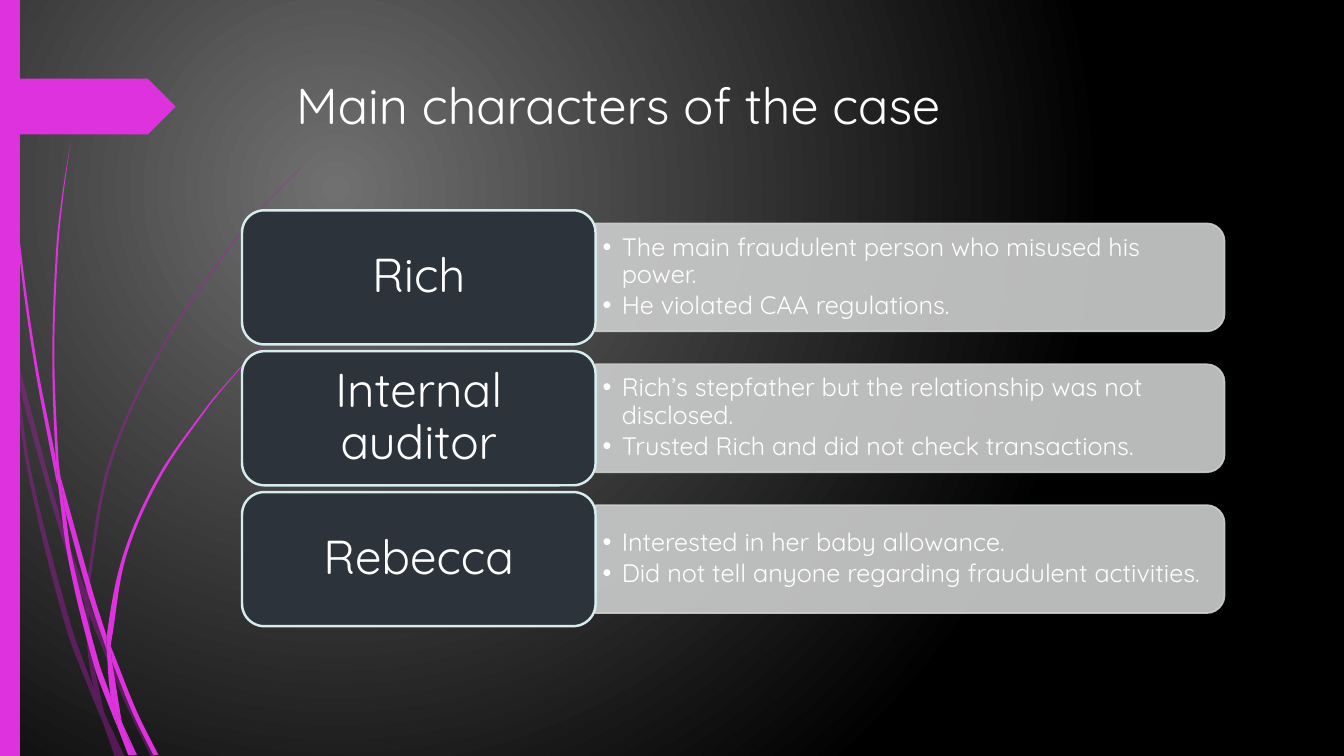
from math import dist

from lxml.etree import SubElement
from pptx import Presentation
from pptx.dml.color import RGBColor
from pptx.enum.shapes import MSO_SHAPE
from pptx.enum.text import MSO_ANCHOR, PP_ALIGN
from pptx.oxml.ns import qn
from pptx.util import Cm, Pt

FONT = "Quicksand"
COLORS = {
    "glow": "707070",
    "black": "000000",
    "pink": "DE32DE",
    "purple": "B01CB0",
    "label": "2C333A",
    "label_line": "D6ECED",
    "panel": "CDCECE",
    "white": "FFFFFF",
}

# Blades of grass in cm: each is a ring of smooth sides that meet in corners
PURPLE_BLADES = [
    [[(0.28, 8.89), (0.23, 8.18)], [(0, 7.16)], [(0, 7.59), (0.25, 8.74)]],
    [[(0.43, 9.55), (1.47, 13.26)], [(2.13, 15.21)], [(2.16, 14.88), (1.57, 13.21)],
     [(0.36, 8.76)]],
    [[(2.24, 15.14)], [(2.24, 15.49), (3.12, 17.63)], [(3.81, 19.08)],
     [(3.94, 19.08), (3.23, 17.58), (2.34, 15.42)]],
    [[(3.02, 19.08)], [(3.15, 19.08)], [(2.67, 18.06)]],
    [[(2.36, 17.35), (1.78, 15.72), (0.79, 11.91), (0.43, 9.55)],
     [(0.28, 8.89), (0.71, 11.94), (1.65, 15.77), (2.34, 17.6)],
     [(2.57, 18.14), (2.51, 17.96)]],
    [[(2.13, 15.21), (2.21, 16.41), (2.36, 17.35), (2.44, 17.58)],
     [(2.67, 18.06), (2.62, 17.93), (2.31, 16.41), (2.24, 15.49)]],
    [[(2.24, 14.83), (2.79, 11.73), (4.06, 8.86), (5.82, 6.22), (6.81, 5.03), (7.37, 4.45)],
     [(7.92, 3.89), (7.34, 4.45), (6.81, 5), (5.79, 6.2), (4.01, 8.84), (2.72, 11.71),
      (2.16, 14.83)], [(2.16, 14.88)], [(2.24, 15.14)]],
    [[(2.57, 18.14)], [(2.9, 19.08)], [(3.02, 19.08)]],
    [[(2.24, 15.49)], [(2.24, 15.14)], [(2.16, 14.88)], [(2.13, 15.21)]],
    [[(2.36, 17.35), (2.51, 17.96), (2.57, 18.14)], [(3.02, 19.08)],
     [(2.67, 18.06), (2.44, 17.58)]],
]
PINK_BLADES = [
    [[(0.08, 0), (0.09, 1.22), (0.18, 2.79), (0.43, 5.92), (0.84, 9.02), (1.42, 12.12)],
     [(1.45, 12.22)], [(1.4, 11.51), (0.91, 9.02), (0.48, 5.89), (0.2, 2.77), (0.13, 1.22)],
     [(0.1, 0)]],
    [[(1.52, 11.99)], [(1.63, 12.83), (2.24, 15.04)], [(2.69, 16.38)],
     [(2.69, 16.03), (2.36, 14.99)]],
    [[(2.79, 16.28)], [(2.82, 16.66), (3.35, 17.98)], [(3.86, 19.02)],
     [(3.99, 19.02), (3.45, 17.93), (2.87, 16.48)]],
    [[(1.45, 12.12), (1.73, 14.15), (2.36, 16.74), (2.82, 17.98)],
     [(2.97, 18.34), (2.95, 18.21), (2.79, 17.55), (2.49, 16.69), (1.83, 14.12), (1.63, 12.83)]],
    [[(1.52, 11.99), (1.47, 11.51), (1.37, 8.86), (1.47, 6.22), (1.6, 4.9)],
     [(1.78, 3.58), (1.57, 4.9), (1.42, 6.22), (1.32, 8.86), (1.4, 11.4)]],
    [[(3.1, 18.26)], [(3.38, 19.02)], [(3.45, 19.02)]],
    [[(1.4, 11.4), (1.45, 12.12)], [(1.63, 12.83)], [(1.52, 11.99)]],
    [[(2.82, 16.08), (3.18, 14.02), (4.01, 12.09), (5.21, 10.31), (5.87, 9.5), (6.22, 9.12)],
     [(6.62, 8.74), (6.22, 9.09), (5.87, 9.47), (5.18, 10.29), (3.96, 12.04), (3.1, 14),
      (2.69, 16.03)], [(2.79, 16.28)]],
    [[(2.97, 18.34)], [(3.23, 19.02)], [(3.33, 19.02)]],
    [[(2.69, 16.38), (2.79, 17.55), (2.95, 17.93)],
     [(3.1, 18.26), (3.07, 18.19), (2.82, 16.66), (2.77, 16.54)]],
    [[(2.69, 16.38)], [(2.82, 16.66)], [(2.79, 16.28)], [(2.69, 16.03)]],
    [[(2.79, 17.55), (2.95, 18.21), (2.97, 18.34)], [(3.3, 19.02)], [(3.38, 19.02)],
     [(3.1, 18.26), (2.95, 17.93)]],
]

CHARACTERS = [
    ("Rich", ["The main fraudulent person who misused his power.",
              "He violated CAA regulations."]),
    ("Internal auditor", ["Rich’s stepfather but the relationship was not disclosed.",
                          "Trusted Rich and did not check transactions."]),
    ("Rebecca", ["Interested in her baby allowance.",
                 "Did not tell anyone regarding fraudulent activities."]),
]

# Row layout in cm
ROW_TOP, ROW_STEP = 5.3, 3.55
LABEL_LEFT, LABEL_WIDTH, LABEL_HEIGHT = 6.1, 8.91, 3.38
PANEL_LEFT, PANEL_WIDTH, PANEL_HEIGHT = LABEL_LEFT + LABEL_WIDTH, 15.85, 2.72


def color(name):
    return RGBColor.from_string(COLORS[name])


def paint(shape, fill, line=None, line_width=0, opacity=100):
    shape.shadow.inherit = False
    shape.fill.solid()
    shape.fill.fore_color.rgb = color(fill)
    if line:
        shape.line.color.rgb = color(line)
        shape.line.width = Pt(line_width)
    else:
        shape.line.fill.background()
    if opacity < 100:
        for element in list(shape.element.spPr.iter(qn("a:srgbClr"))):
            SubElement(element, qn("a:alpha"), val=str(opacity * 1000))


def add_shape(slide, preset, left, top, width, height):
    return slide.shapes.add_shape(preset, Cm(left), Cm(top), Cm(width), Cm(height))


def add_run(paragraph, text, size):
    run = paragraph.add_run()
    run.text = text
    run.font.name = FONT
    run.font.size = Pt(size)
    run.font.color.rgb = color("white")


def set_frame(frame, horizontal, vertical):
    frame.word_wrap = True
    frame.vertical_anchor = MSO_ANCHOR.MIDDLE
    frame.margin_left = frame.margin_right = Cm(horizontal)
    frame.margin_top = frame.margin_bottom = Cm(vertical)


def set_background(slide):
    fill = slide.background.fill
    fill.gradient()
    for stop, name in zip(fill.gradient_stops, ("glow", "black")):
        stop.color.rgb = color(name)
    gradient = next(slide.element.iter(qn("a:gradFill")))
    gradient.remove(gradient.find(qn("a:lin")))
    circle = SubElement(gradient, qn("a:path"), path="circle")
    SubElement(circle, qn("a:fillToRect"), l="50000", t="50000", r="100000", b="100000")


def control_point(before, point, after, toward):
    """Place a handle of point on its tangent, a third of the way to toward."""
    share = dist(point, toward) / (3 * (dist(before, point) + dist(point, after)))
    return tuple(p + share * (a - b) for b, p, a in zip(before, point, after))


def smooth_curves(points):
    padded = [points[0], *points, points[-1]]
    return [(control_point(a, b, c, c), control_point(d, c, b, b), c)
            for a, b, c, d in zip(padded, padded[1:], padded[2:], padded[3:])]


def add_blade(group, sides, fill, opacity):
    curves = []
    for side, following in zip(sides, sides[1:] + sides[:1]):
        curves += smooth_curves(side + following[:1])
    start = sides[0][0]
    builder = group.shapes.build_freeform(Cm(start[0]), Cm(start[1]))
    builder.add_line_segments([(Cm(x), Cm(y)) for _, _, (x, y) in curves], close=True)
    blade = builder.convert_to_shape()
    # Turn each straight segment into a cubic curve
    segments = list(blade.element.spPr.iter(qn("a:lnTo")))
    for segment, curve in zip(segments, curves):
        segment.tag = qn("a:cubicBezTo")
        segment.remove(segment[0])
        for x, y in curve:
            SubElement(segment, qn("a:pt"), x=str(Cm(x) - blade.left), y=str(Cm(y) - blade.top))
    paint(blade, fill, opacity=opacity)


def add_title(slide, text):
    title = slide.shapes.title
    title.left, title.top, title.width, title.height = Cm(7.21), Cm(1.73), Cm(24.77), Cm(3.56)
    title.text_frame.vertical_anchor = MSO_ANCHOR.TOP
    paragraph = title.text_frame.paragraphs[0]
    paragraph.alignment = PP_ALIGN.LEFT
    add_run(paragraph, text, 36)


def add_panel(slide, top):
    # The preset has its round corners on top, so it is turned to the right
    shift = (PANEL_WIDTH - PANEL_HEIGHT) / 2
    panel = add_shape(slide, MSO_SHAPE.ROUND_2_SAME_RECTANGLE, PANEL_LEFT + shift,
                      top - shift, PANEL_HEIGHT, PANEL_WIDTH)
    panel.rotation = 90
    paint(panel, "panel", "panel", 1.25, opacity=90)


def add_bullets(slide, top, items):
    box = slide.shapes.add_textbox(Cm(PANEL_LEFT), Cm(top + 0.13), Cm(15.72), Cm(2.44))
    set_frame(box.text_frame, 0.18, 0.1)
    for index, item in enumerate(items):
        paragraph = box.text_frame.add_paragraph() if index else box.text_frame.paragraphs[0]
        paragraph.line_spacing = 0.9
        paragraph.space_after = Pt(2.7)
        add_run(paragraph, item, 18)
        properties = paragraph._p.get_or_add_pPr()
        properties.set("marL", str(Cm(0.48)))
        properties.set("indent", str(-Cm(0.48)))
        SubElement(properties, qn("a:buFont"), typeface="Arial")
        SubElement(properties, qn("a:buChar"), char="•")


def add_label(slide, top, name):
    label = add_shape(slide, MSO_SHAPE.ROUNDED_RECTANGLE, LABEL_LEFT, top,
                      LABEL_WIDTH, LABEL_HEIGHT)
    paint(label, "label", "label_line", 1.75)
    set_frame(label.text_frame, 0.36, 0.18)
    paragraph = label.text_frame.paragraphs[0]
    paragraph.alignment = PP_ALIGN.CENTER
    paragraph.line_spacing = 0.9
    add_run(paragraph, name, 34)


def main():
    presentation = Presentation()
    presentation.slide_width, presentation.slide_height = Cm(33.87), Cm(19.05)
    slide = presentation.slides.add_slide(presentation.slide_layouts[5])
    set_background(slide)

    # Decoration on the left
    for blades, fill, opacity in ((PURPLE_BLADES, "purple", 40), (PINK_BLADES, "pink", 100)):
        group = slide.shapes.add_group_shape()
        for sides in blades:
            add_blade(group, sides, fill, opacity)
    paint(add_shape(slide, MSO_SHAPE.RECTANGLE, 0, 0, 0.5, 19.05), "pink")
    paint(add_shape(slide, MSO_SHAPE.PENTAGON, 0, 1.98, 4.43, 1.41), "pink")

    # Title and one row for each character
    add_title(slide, "Main characters of the case")
    for row, (name, facts) in enumerate(CHARACTERS):
        top = ROW_TOP + row * ROW_STEP
        panel_top = top + (LABEL_HEIGHT - PANEL_HEIGHT) / 2
        add_panel(slide, panel_top)
        add_bullets(slide, panel_top, facts)
        add_label(slide, top, name)

    presentation.save("out.pptx")


if __name__ == "__main__":
    main()
